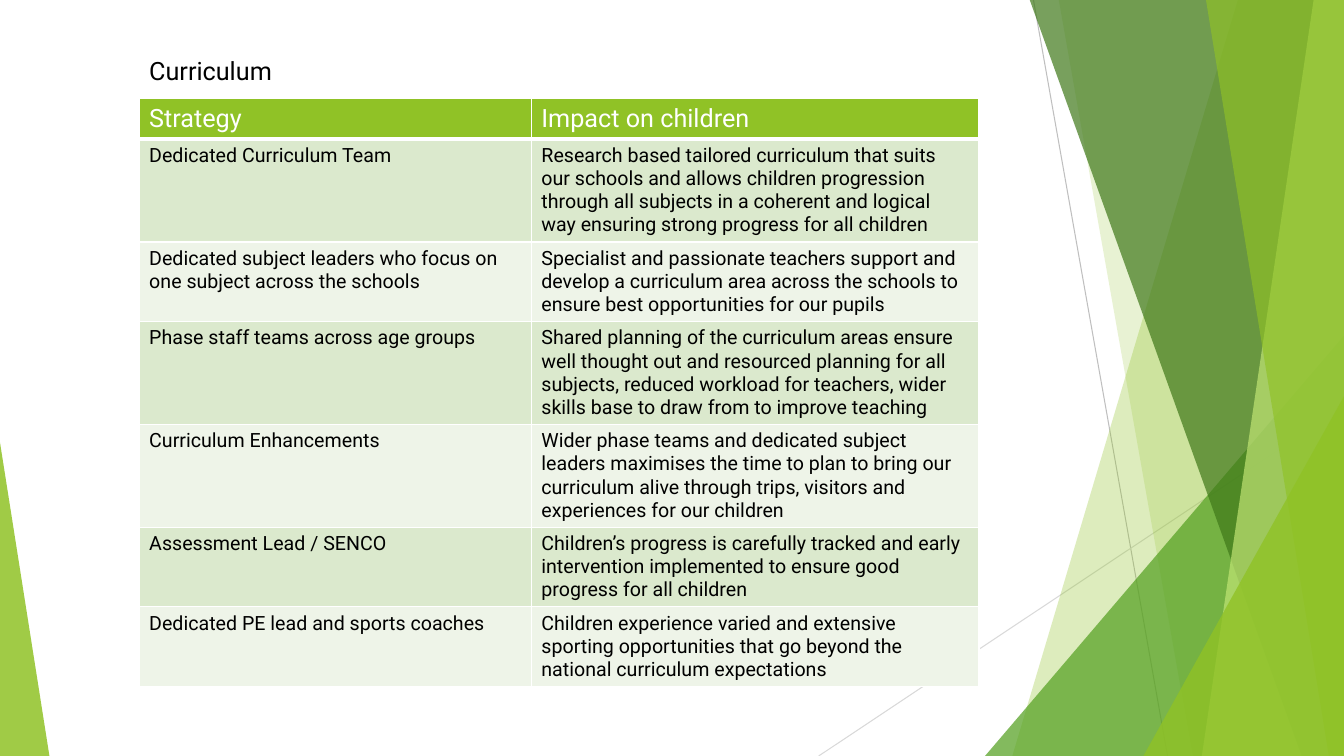
from dataclasses import dataclass

from lxml import etree
from pptx import Presentation
from pptx import util as u
from pptx.dml.color import RGBColor
from pptx.enum import shapes, text
from pptx.oxml import ns

PX = u.Inches(1) // 100
WIDTH, HEIGHT = 1333, 750


@dataclass(frozen=True)
class Theme:
    font: str = "Roboto"
    heading: int = 18
    body: int = 14
    ink: str = "000000"
    white: str = "FFFFFF"
    lime: str = "90C226"
    green: str = "54A021"
    forest: str = "3F7819"
    pale: str = "C0E474"
    rule: str = "BFBFBF"
    soft_rule: str = "D9D9D9"
    bands: tuple = ("DBE9CD", "EEF4E8")


def assign(obj, values):
    for name, value in values.items():
        setattr(obj, name, value)


def add_xml(parent, tag, **attrs):
    return etree.SubElement(parent, ns.qn(tag), attrs)


class SlideBuilder:
    def __init__(self, prs, theme):
        self.theme = theme
        self.slide = prs.slides.add_slide(prs.slide_layouts[5])
        self.shapes = self.slide.shapes

    def set_text(self, tf, content, size, colour):
        assign(tf, {"text": content, "word_wrap": True})
        p = tf.paragraphs[0]
        p.alignment = text.PP_ALIGN.LEFT
        font = p.runs[0].font
        assign(font, {"name": self.theme.font, "size": u.Pt(size), "bold": False})
        font.color.rgb = RGBColor.from_string(colour)

    def title(self, content, left, top, width, height):
        sp = self.shapes.title
        box = {"left": left, "top": top, "width": width, "height": height}
        assign(sp, {side: px * PX for side, px in box.items()})
        assign(sp.text_frame, {"auto_size": text.MSO_AUTO_SIZE.NONE,
                               "vertical_anchor": text.MSO_ANCHOR.TOP})
        self.set_text(sp.text_frame, content, self.theme.heading, self.theme.ink)

    def line(self, start, end, colour):
        points = [px * PX for px in (*start, *end)]
        cxn = self.shapes.add_connector(shapes.MSO_CONNECTOR.STRAIGHT, *points)
        cxn.line.width = u.Pt(0.75)
        cxn.line.color.rgb = RGBColor.from_string(colour)
        add_xml(cxn._element.spPr, "a:effectLst")

    def tint(self, sp, colour, opacity):
        """Fill a shape with a see-through colour and no outline."""
        sp.shadow.inherit = False
        sp.line.fill.background()
        sp.fill.solid()
        sp.fill.fore_color.rgb = RGBColor.from_string(colour)
        rgb = sp._element.spPr.find(".//" + ns.qn("a:srgbClr"))
        add_xml(rgb, "a:alpha", val=str(opacity * 1000))

    def shard(self, top_x, bottom_x, colour, opacity):
        """Draw a slanted panel that reaches the right edge of the slide."""
        builder = self.shapes.build_freeform(top_x, -1, scale=PX)
        builder.add_line_segments([(WIDTH, -1), (WIDTH, HEIGHT), (bottom_x, HEIGHT)])
        self.tint(builder.convert_to_shape(), colour, opacity)

    def triangle(self, left, top, width, apex, colour, opacity):
        """Draw a triangle that stands on the bottom edge of the slide."""
        box = [px * PX for px in (left, top, width, HEIGHT - top)]
        sp = self.shapes.add_shape(shapes.MSO_SHAPE.ISOSCELES_TRIANGLE, *box)
        sp.adjustments[0] = apex
        self.tint(sp, colour, opacity)

    def cell(self, cell, content, size, colour, fill, bottom_width):
        self.set_text(cell.text_frame, content, size, colour)
        tc_pr = cell._tc.get_or_add_tcPr()
        for side in "LRTB":
            width = u.Pt(bottom_width if side == "B" else 1)
            ln = add_xml(tc_pr, "a:ln" + side, w=str(width))
            add_xml(add_xml(ln, "a:solidFill"), "a:srgbClr", val=self.theme.white)
        cell.fill.solid()
        cell.fill.fore_color.rgb = RGBColor.from_string(fill)

    def table(self, rows, left, top, widths, heights):
        t = self.theme
        box = [px * PX for px in (left, top, sum(widths), sum(heights))]
        table = self.shapes.add_table(len(rows), len(widths), *box).table
        table.horz_banding = False
        for column, width in zip(table.columns, widths):
            column.width = width * PX
        for i, (row, height) in enumerate(zip(rows, heights)):
            table.rows[i].height = height * PX
            if i == 0:
                style = (t.heading, t.white, t.lime, 3)
            else:
                style = (t.body, t.ink, t.bands[(i - 1) % 2], 1)
            for j, content in enumerate(row):
                self.cell(table.cell(i, j), content, *style)


HEADER = ("Strategy", "Impact on children")
# Strategy, impact, lines of text in the row
STRATEGIES = [
    ("Dedicated Curriculum Team",
     "Research based tailored curriculum that suits our schools and allows children "
     "progression through all subjects in a coherent and logical way ensuring strong "
     "progress for all children", 4),
    ("Dedicated subject leaders who focus on one subject across the schools",
     "Specialist and passionate teachers support and develop a curriculum area across "
     "the schools to ensure best opportunities for our pupils", 3),
    ("Phase staff teams across age groups",
     "Shared planning of the curriculum areas ensure well thought out and resourced "
     "planning for all subjects, reduced workload for teachers, wider skills base to "
     "draw from to improve teaching", 4),
    ("Curriculum Enhancements",
     "Wider phase teams and dedicated subject leaders maximises the time to plan to "
     "bring our curriculum alive through trips, visitors and experiences for our "
     "children", 4),
    ("Assessment Lead / SENCO",
     "Children’s progress is carefully tracked and early intervention implemented to "
     "ensure good progress for all children", 3),
    ("Dedicated PE lead and sports coaches",
     "Children experience varied and extensive sporting opportunities that go beyond "
     "the national curriculum expectations", 3),
]


def draw_backdrop(s):
    t = s.theme
    s.line((1025, 0), (1158, HEIGHT), t.rule)
    s.line((WIDTH, 403), (812, HEIGHT), t.soft_rule)
    s.shard(1228, 1004, t.lime, 30)
    s.shard(1050, 1183, t.lime, 20)
    s.triangle(977, 333, 356, 1, t.green, 72)
    s.shard(1021, 1291, t.forest, 70)
    s.shard(1303, 1192, t.pale, 70)
    s.shard(1196, 1318, t.lime, 65)
    s.triangle(1134, 393, 199, 1, t.lime, 80)
    s.triangle(0, 439, 49, 0, t.lime, 85)


def main():
    prs = Presentation()
    assign(prs, {"slide_width": WIDTH * PX, "slide_height": HEIGHT * PX})
    s = SlideBuilder(prs, Theme())
    draw_backdrop(s)
    rows = [HEADER] + [row[:2] for row in STRATEGIES]
    heights = [40] + [10 + 23 * lines for *_, lines in STRATEGIES]
    s.table(rows, 138, 98, (389, 444), heights)
    s.title("Curriculum", 138, 50, 360, 40)
    prs.save("out.pptx")


if __name__ == "__main__":
    main()
